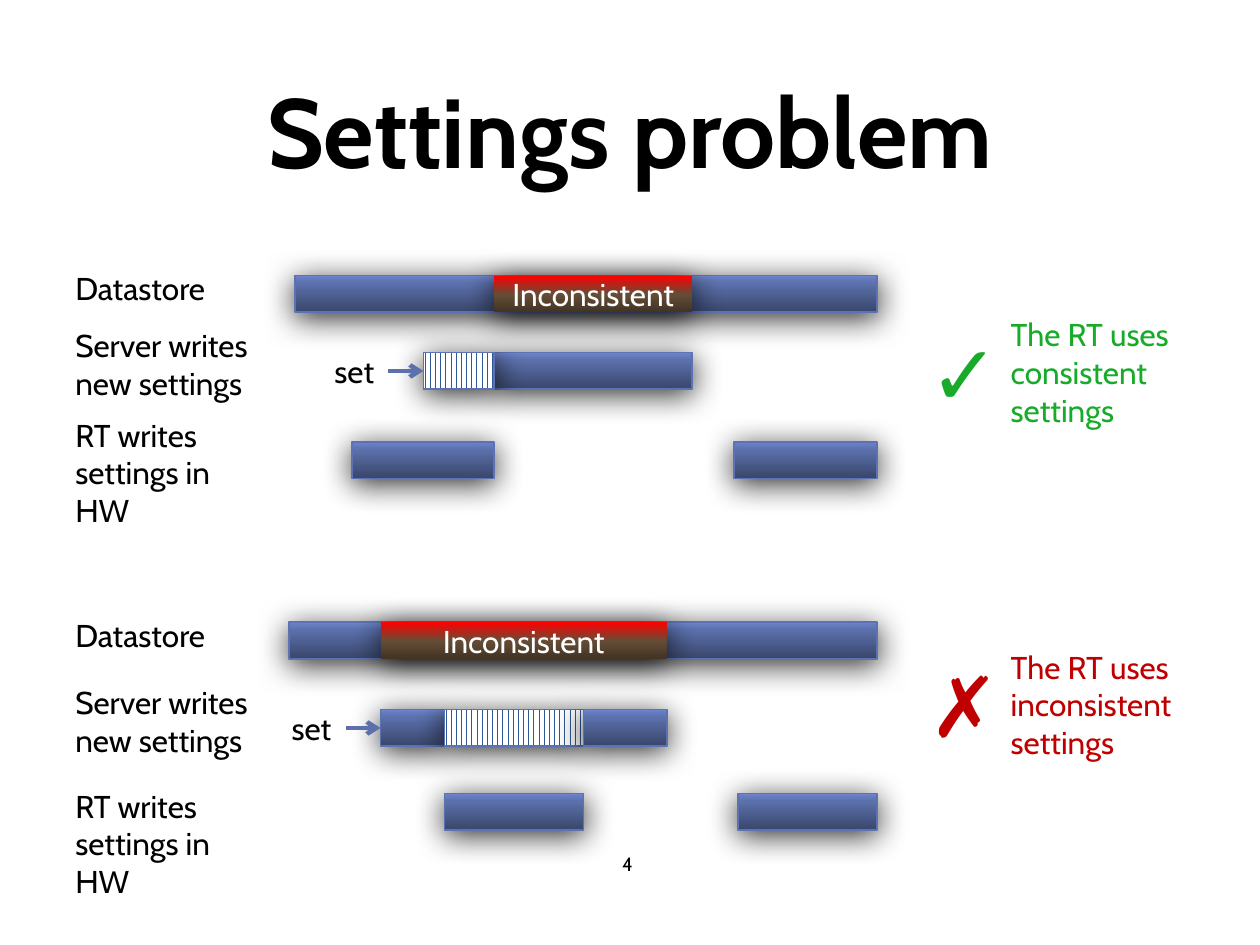
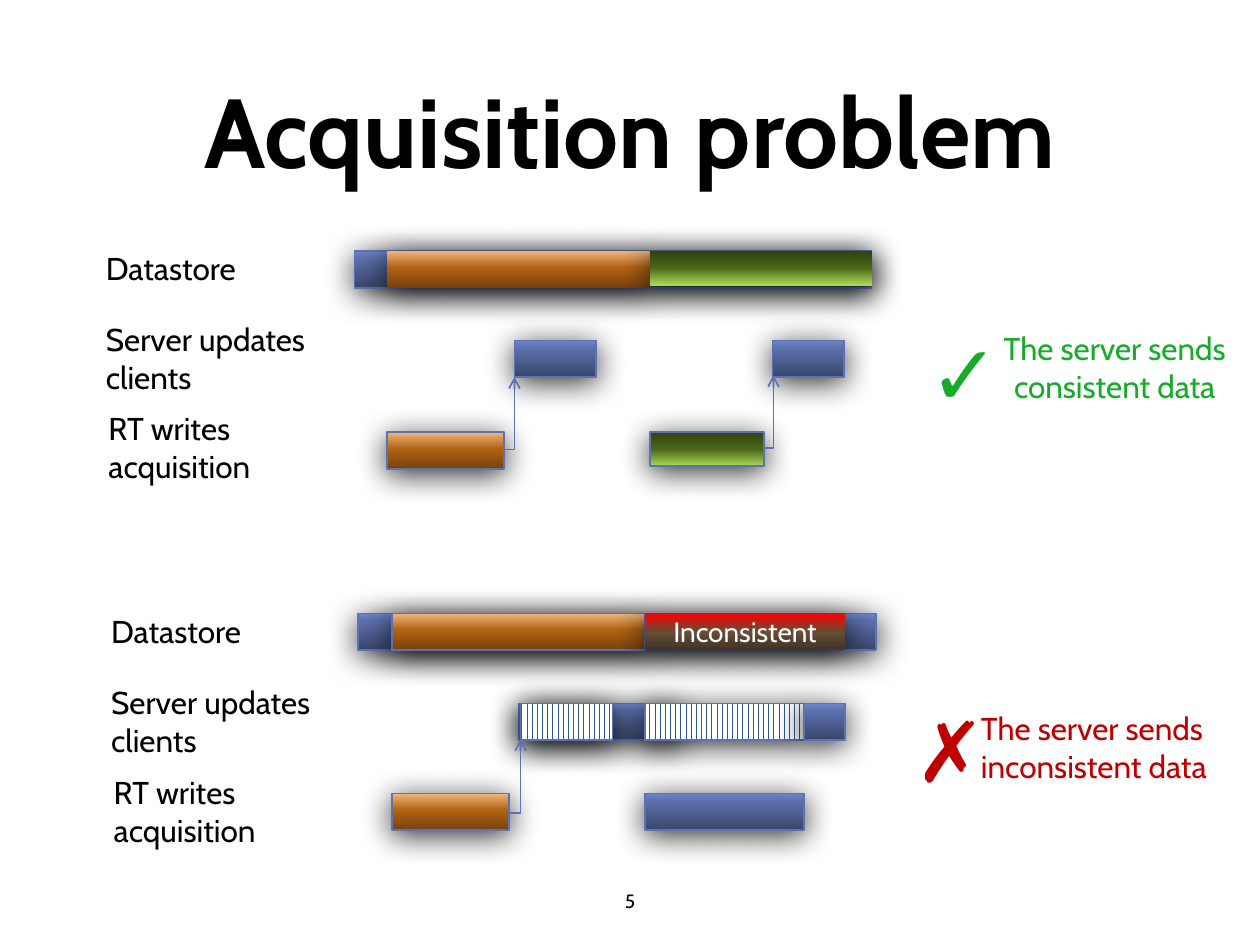
import copy

import pptx
import pptx.dml.color
import pptx.enum.dml
import pptx.enum.shapes
import pptx.enum.text
import pptx.oxml
import pptx.oxml.ns
import pptx.util

Pt = pptx.util.Pt
qn = pptx.oxml.ns.qn
ALIGN = pptx.enum.text.PP_ALIGN
ANCHOR = pptx.enum.text.MSO_ANCHOR
CONNECTOR = pptx.enum.shapes.MSO_CONNECTOR

FONT = "Cabin"
COLORS = {
    "text": "000000",
    "background": "FFFFFF",
    "bar_text": "FFFFFF",
    "good": "17AB29",
    "bad": "C00000",
    "outline": "5C72B2",
    "arrow": "5C71AC",
    "stripe": "FFFFFF",
    "stripe_gap": "2F5897",
}
# Gradient stops (position in percent, colour), direction and bar height.
GRADIENTS = {
    "blue": ([(0, "39466B"), (80, "5C71AC"), (100, "6D84CD")], 90, 21),
    "orange": ([(0, "77420D"), (55, "B26314"), (100, "F0B57A")], 90, 21),
    "green": ([(0, "314410"), (50, "4A6717"), (100, "ABD958")], 270, 19.5),
    "red": ([(0, "423324"), (48, "634D36"), (100, "FF0000")], 90, 21),
}
SHADOW = (
    '<a:outerShdw xmlns:a="http://schemas.openxmlformats.org/drawingml/2006/main" '
    'blurRad="228600" dist="38100" dir="5400000" rotWithShape="0">'
    '<a:srgbClr val="000000"><a:alpha val="80000"/></a:srgbClr></a:outerShdw>'
)
DATASTORE, SERVER, REAL_TIME = range(3)


def rgb(name):
    return pptx.dml.color.RGBColor.from_string(COLORS.get(name, name))


class Deck:
    """Holds the shared style and the slide being drawn."""

    def __init__(self):
        self.presentation = pptx.Presentation()
        self.presentation.slide_width = Pt(720)
        self.presentation.slide_height = Pt(540)
        fill = self.presentation.slide_master.background.fill
        fill.solid()
        fill.fore_color.rgb = rgb("background")
        self.slide = None

    def start_slide(self, title, number, number_left, number_top):
        layout = self.presentation.slide_layouts[5]
        self.slide = self.presentation.slides.add_slide(layout)
        shape = self.slide.shapes.title
        shape.left, shape.top = Pt(61.5), Pt(8.5)
        shape.width, shape.height = Pt(597), Pt(130.5)
        shape.text_frame.vertical_anchor = ANCHOR.MIDDLE
        self.set_text(shape, title, 56, "text", ALIGN.CENTER, bold=True)
        box = self.text(number, number_left, number_top, 60, size=11,
                        align=ALIGN.CENTER, height=29)
        box.text_frame.vertical_anchor = ANCHOR.MIDDLE

    def set_text(self, shape, text, size, color, align=ALIGN.LEFT, bold=False):
        shape.text_frame.text = text
        for paragraph in shape.text_frame.paragraphs:
            paragraph.alignment = align
            paragraph.font.name = FONT
            paragraph.font.size = Pt(size)
            paragraph.font.bold = bold
            paragraph.font.color.rgb = rgb(color)

    def text(self, text, left, top, width, size=18, color="text",
             align=ALIGN.LEFT, height=29, inset=True):
        box = self.slide.shapes.add_textbox(Pt(left), Pt(top), Pt(width), Pt(height))
        frame = box.text_frame
        frame.word_wrap = True
        if not inset:
            frame.margin_left = frame.margin_right = 0
            frame.margin_top = frame.margin_bottom = 0
        self.set_text(box, text, size, color, align)
        return box

    def bar(self, style, left, right, top, text="", size=18, outlined=True):
        height = GRADIENTS[style][2] if style in GRADIENTS else 21
        shape = self.slide.shapes.add_shape(
            pptx.enum.shapes.MSO_SHAPE.RECTANGLE,
            Pt(left), Pt(top), Pt(right - left), Pt(height))
        if style == "striped":
            shape.fill.patterned()
            shape.fill.pattern = pptx.enum.dml.MSO_PATTERN.DARK_VERTICAL
            shape.fill.fore_color.rgb = rgb("stripe")
            shape.fill.back_color.rgb = rgb("stripe_gap")
        else:
            self.gradient(shape, style)
        if outlined:
            shape.line.color.rgb = rgb("outline")
            shape.line.width = Pt(1)
        else:
            shape.line.fill.background()
        shape.shadow.inherit = False
        effects = shape._element.spPr.find(qn("a:effectLst"))
        effects.append(pptx.oxml.parse_xml(SHADOW))
        if text:
            shape.text_frame.margin_left = shape.text_frame.margin_right = 0
            shape.text_frame.vertical_anchor = ANCHOR.MIDDLE
            self.set_text(shape, text, size, "bar_text", ALIGN.CENTER)

    def gradient(self, shape, style):
        stops, angle, _ = GRADIENTS[style]
        shape.fill.gradient()
        shape.fill.gradient_angle = angle
        stop_list = shape._element.spPr.find(".//" + qn("a:gsLst"))
        stop_list.append(copy.deepcopy(stop_list[-1]))
        for stop, (position, color) in zip(shape.fill.gradient_stops, stops):
            stop.position = position / 100
            stop.color.rgb = rgb(color)

    def arrow(self, start, end, color, width, kind=CONNECTOR.STRAIGHT):
        connector = self.slide.shapes.add_connector(
            kind, *(Pt(value) for value in start + end))
        connector.line.color.rgb = rgb(color)
        connector.line.width = Pt(width)
        properties = connector._element.spPr
        line = properties.find(qn("a:ln"))
        line.append(line.makeelement(qn("a:tailEnd"), {"type": "arrow"}))
        properties.append(properties.makeelement(qn("a:effectLst"), {}))
        return connector

    def trigger(self, start, end):
        """Draw an arrow with one bend: to the right, then up."""
        connector = self.arrow(start, end, "outline", 1, CONNECTOR.ELBOW)
        geometry = connector._element.spPr.find(qn("a:prstGeom"))
        geometry.set("prst", "bentConnector2")

    def set_arrow(self, bar_left, bar_top):
        middle = bar_top + 10.5
        self.arrow((bar_left - 20, middle), (bar_left, middle), "arrow", 2.5)
        self.text("set", bar_left - 58, bar_top - 4, 40)

    def timeline(self, labels, label_width, bar_tops, bars):
        """Draw row labels (text, left, top) and bars (row, style, left, right, options)."""
        for text, left, top in labels:
            self.text(text, left, top, label_width, inset=False,
                      height=22 * (text.count("\n") + 1))
        for row, style, left, right, *options in bars:
            self.bar(style, left, right, bar_tops[row], **(options[0] if options else {}))

    def verdict(self, good, text, mark_at, text_at, width, align=ALIGN.LEFT):
        color = "good" if good else "bad"
        self.text("✓" if good else "✗", *mark_at, 53, 48, color, height=65.5)
        self.text(text, *text_at, width, color=color, align=align, height=51)


def rows(texts, lefts, tops):
    return list(zip(texts, lefts, tops))


def settings_slide(deck):
    deck.start_slide("Settings problem", "4", 328.5, 479)
    texts = ("Datastore", "Server writes\nnew settings", "RT writes\nsettings in HW")
    lefts = (43, 43, 43)
    inconsistent = {"text": "Inconsistent", "outlined": False}

    deck.timeline(rows(texts, lefts, (352, 390.5, 449.5)), 110, (355.5, 405.5, 453.5), [
        (DATASTORE, "blue", 165, 501),
        (SERVER, "blue", 217.5, 254),
        (REAL_TIME, "blue", 254, 333.5),
        (DATASTORE, "red", 217.5, 381, inconsistent),
        (REAL_TIME, "blue", 421.5, 501),
        (SERVER, "striped", 254, 333.5),
        (SERVER, "blue", 333.5, 381),
    ])
    deck.set_arrow(217.5, 405.5)
    deck.verdict(False, "The RT uses inconsistent settings", (524, 370), (570.5, 366.5), 166)

    deck.timeline(rows(texts, lefts, (154, 186.5, 237.5)), 110, (157.5, 201.5, 252.5), [
        (DATASTORE, "blue", 168.5, 501),
        (SERVER, "blue", 282.5, 395.5),
        (REAL_TIME, "blue", 201, 282.5),
        (DATASTORE, "red", 282.5, 395.5, inconsistent),
        (REAL_TIME, "blue", 419.5, 501),
        (SERVER, "striped", 242, 282.5),
    ])
    deck.set_arrow(242, 201.5)
    deck.verdict(True, "The RT uses consistent settings", (524, 180), (570.5, 176.5), 127)


def acquisition_slide(deck):
    deck.start_slide("Acquisition problem", "5", 330, 500.5)
    texts = ("Datastore", "Server updates\nclients", "RT writes\nacquisition")
    plain = {"outlined": False}

    deck.timeline(rows(texts, (63.5, 63.5, 65), (350, 390.5, 442)), 120, (350.5, 402, 453.5), [
        (DATASTORE, "blue", 204.5, 500.5),
        (SERVER, "blue", 296.5, 387.5),
        (REAL_TIME, "blue", 368.5, 459.5),
        (REAL_TIME, "orange", 224, 291),
        (DATASTORE, "orange", 224, 368.5),
        (SERVER, "striped", 297.5, 350),
        (DATASTORE, "red", 368.5, 483,
         {"text": "Inconsistent", "size": 16, "outlined": False}),
        (SERVER, "striped", 368.5, 459.5),
        (SERVER, "blue", 459.5, 483),
    ])
    deck.trigger((291.5, 464.5), (297.5, 422.5))
    deck.verdict(False, "The server sends inconsistent data", (516, 395.5), (553.5, 401.5), 166)

    deck.timeline(rows(texts, (60.5, 60.5, 62), (142.5, 183, 234)), 120, (143.5, 194.5, 247), [
        (DATASTORE, "blue", 202.5, 498),
        (SERVER, "blue", 294, 340.5),
        (REAL_TIME, "orange", 221, 288),
        (DATASTORE, "orange", 221, 371.5, plain),
        (DATASTORE, "green", 371.5, 498.5, plain),
        (REAL_TIME, "green", 371.5, 436.5),
        (SERVER, "blue", 441.5, 482.5),
    ])
    deck.trigger((288.5, 257), (294, 215.5))
    deck.trigger((436.5, 256), (442, 214.5))
    deck.verdict(True, "The server sends consistent data", (524, 180), (566, 184.5), 142,
                 ALIGN.CENTER)


def main():
    deck = Deck()
    settings_slide(deck)
    acquisition_slide(deck)
    deck.presentation.save("out.pptx")


if __name__ == "__main__":
    main()
